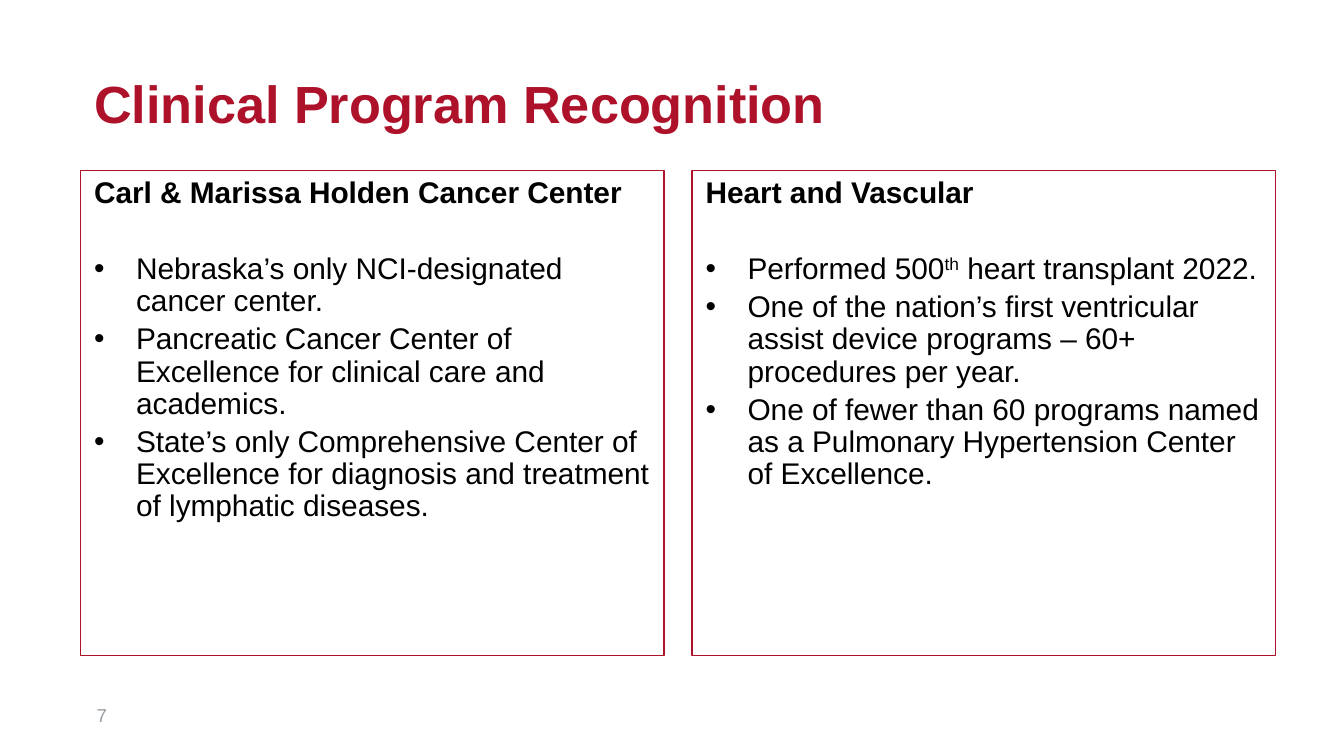
import pptx
import pptx.util
import pptx.dml.color
import pptx.enum.text
import pptx.oxml.ns
import lxml.etree

Pt = pptx.util.Pt
COLORS = {"red": "AD122A", "text": "000000", "gray": "989EA3"}
PANELS = [
    ("Carl & Marissa Holden Cancer Center", [
        ["Nebraska’s only NCI-designated cancer center."],
        ["Pancreatic Cancer Center of Excellence for clinical care and academics.\u00a0"],
        ["State’s only Comprehensive Center of Excellence for diagnosis "
         "and treatment of lymphatic diseases."],
    ]),
    ("Heart and Vascular", [
        ["Performed 500", "th", " heart transplant 2022."],
        ["One of the nation’s first ventricular assist device programs – "
         "60+ procedures per year."],
        ["One of fewer than 60 programs named as a Pulmonary Hypertension "
         "Center of Excellence."],
    ]),
]


def color(name):
    return pptx.dml.color.RGBColor.from_string(COLORS[name])


def place(shape, left, top, width, height):
    shape.left, shape.top = Pt(left), Pt(top)
    shape.width, shape.height = Pt(width), Pt(height)


def frame(shape, anchor="TOP", inset=3.6):
    box = shape.text_frame
    box.word_wrap = True
    box.auto_size = pptx.enum.text.MSO_AUTO_SIZE.NONE
    box.vertical_anchor = pptx.enum.text.MSO_ANCHOR[anchor]
    box.margin_left = box.margin_right = Pt(7.2)
    box.margin_top = box.margin_bottom = Pt(inset)
    return box


def mark(para, char):
    props = para._p.get_or_add_pPr()
    indent = Pt(22.5) if char else 0
    props.set("marL", str(indent))
    props.set("indent", str(-indent))
    tag = "a:buChar" if char else "a:buNone"
    bullet = lxml.etree.SubElement(props, pptx.oxml.ns.qn(tag))
    if char:
        bullet.set("char", char)


def write(para, text, size=16, bold=False, tint="text", raised=False):
    run = para.add_run()
    run.text = text
    font = run.font
    font.name, font.size, font.bold = "Arial", Pt(size), bold
    font.color.rgb = color(tint)
    if raised:
        font._element.set("baseline", "30000")


def panel(shape, left, head, items):
    place(shape, left, 91.44, 312.48, 259.92)
    shape.line.color.rgb = color("red")
    shape.line.width = Pt(0.75)
    box = frame(shape)
    para = box.paragraphs[0]
    para.line_spacing = 0.9
    para.space_before = Pt(0)
    mark(para, None)
    write(para, head, bold=True)
    for index, parts in enumerate(items):
        para = box.add_paragraph()
        para.line_spacing = 0.9
        para.space_before = Pt(3.2 if index else 23.6)
        mark(para, "•")
        for part in parts:
            write(para, part, raised=part == "th")


def title(shape, text):
    place(shape, 43.2, 40.32, 640.08, 33.84)
    para = frame(shape, "MIDDLE", 0).paragraphs[0]
    para.alignment = pptx.enum.text.PP_ALIGN.LEFT
    para.line_spacing = 0.9
    write(para, text, size=28, bold=True, tint="red")


def number(slide, text):
    shape = slide.shapes.add_textbox(Pt(44.64), Pt(373.68), Pt(99.36), Pt(31.68))
    write(frame(shape).paragraphs[0], text, size=10, tint="gray")


def main():
    deck = pptx.Presentation()
    deck.slide_width, deck.slide_height = Pt(720), Pt(405)
    slide = deck.slides.add_slide(deck.slide_layouts[3])
    title(slide.shapes.title, "Clinical Program Recognition")
    for index, (head, items) in enumerate(PANELS):
        panel(slide.placeholders[index + 1], 43.2 + index * 327.6, head, items)
    number(slide, "7")
    deck.save("out.pptx")


if __name__ == "__main__":
    main()
